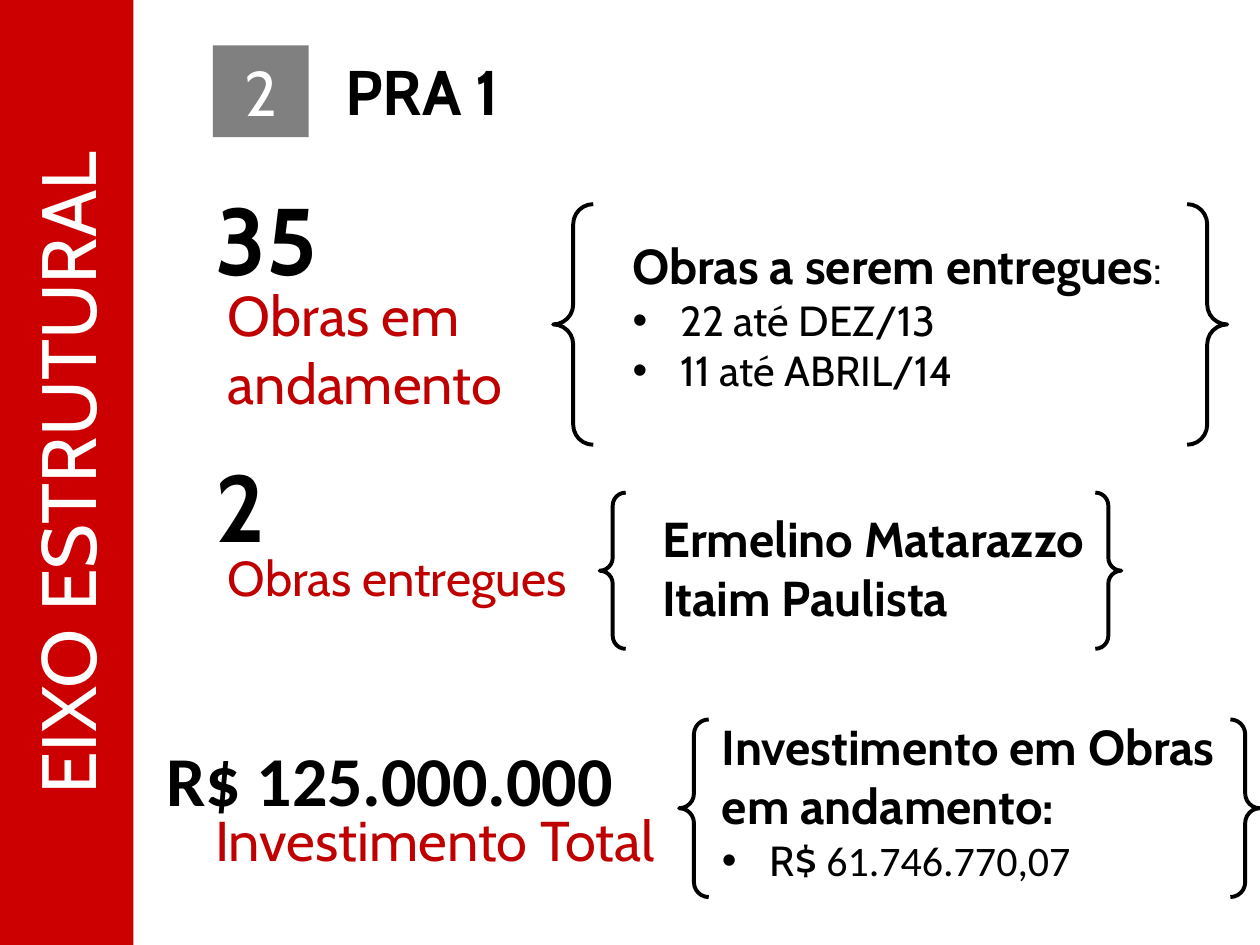
import pptx
import pptx.util
import pptx.dml.color
import pptx.enum.shapes
import pptx.enum.text
import pptx.oxml
import pptx.oxml.ns

Inches = pptx.util.Inches
Pt = pptx.util.Pt
SHAPES = pptx.enum.shapes.MSO_SHAPE
ALIGN = pptx.enum.text.PP_ALIGN
ANCHOR = pptx.enum.text.MSO_ANCHOR
FIT = pptx.enum.text.MSO_AUTO_SIZE

COLORS = {
    "bar": "CC0000",
    "badge": "808080",
    "label": "C00000",
    "text": "000000",
    "light": "FFFFFF",
}
BULLET_INDENT = 0.38


def color(name):
    return pptx.dml.color.RGBColor.from_string(COLORS[name])


def place(shape, left, top, width, height):
    shape.left, shape.top = Inches(left), Inches(top)
    shape.width, shape.height = Inches(width), Inches(height)


def set_bullet(para, bulleted):
    properties = para._p.get_or_add_pPr()
    indent = Inches(BULLET_INDENT) if bulleted else 0
    properties.set("marL", str(indent))
    properties.set("indent", str(-indent))
    namespace = pptx.oxml.ns.nsdecls("a")
    if bulleted:
        marks = [f'<a:buFont {namespace} typeface="Arial"/>',
                 f'<a:buChar {namespace} char="•"/>']
    else:
        marks = [f"<a:buNone {namespace}/>"]
    for mark in marks:
        properties.append(pptx.oxml.parse_xml(mark))


def write_text(shape, paragraphs, size=28, ink="text", bold=False, font="Cabin",
               align=ALIGN.LEFT, anchor=ANCHOR.TOP, fit=FIT.SHAPE_TO_FIT_TEXT):
    """Each paragraph is (bulleted, spans); a span is (text, format changes)."""
    frame = shape.text_frame
    frame.word_wrap = True
    frame.auto_size = fit
    frame.vertical_anchor = anchor
    for index, (bulleted, spans) in enumerate(paragraphs):
        para = frame.add_paragraph() if index else frame.paragraphs[0]
        para.alignment = align
        para.space_before = para.space_after = Pt(0)
        set_bullet(para, bulleted)
        for text, changes in spans:
            span = para.add_run()
            span.text = text
            span.font.size = Pt(changes.get("size", size))
            span.font.bold = changes.get("bold", bold)
            span.font.name = changes.get("font", font)
            span.font.color.rgb = color(ink)


def plain(*lines):
    return [(False, [(line, {})]) for line in lines]


def add_text(page, bounds, *lines, **formats):
    box = page.shapes.add_textbox(*map(Inches, bounds))
    write_text(box, plain(*lines), **formats)


def add_block(page, bounds, fill, text, size, rotation=0):
    block = page.shapes.add_shape(SHAPES.RECTANGLE, *map(Inches, bounds))
    block.shadow.inherit = False
    block.fill.solid()
    block.fill.fore_color.rgb = color(fill)
    block.line.fill.background()
    block.rotation = rotation
    write_text(block, plain(text), size=size, ink="light", align=ALIGN.CENTER,
               anchor=ANCHOR.MIDDLE, fit=FIT.NONE)


def add_braces(page, bounds):
    braces = page.shapes.add_shape(SHAPES.DOUBLE_BRACE, *map(Inches, bounds))
    braces.shadow.inherit = False
    braces.fill.background()
    braces.line.color.rgb = color("text")
    braces.line.width = Pt(2.25)


def fill_placeholder(holder, bounds, paragraphs, **formats):
    place(holder, *bounds)
    write_text(holder, paragraphs, bold=True, **formats)


def main():
    deck = pptx.Presentation()
    deck.slide_width, deck.slide_height = Inches(10), Inches(7.5)
    page = deck.slides.add_slide(deck.slide_layouts.get_by_name("Two Content"))
    title, works, investment = list(page.placeholders)[:3]

    # Heading and side bar
    add_block(page, (1.69, 0.36, 0.76, 0.73), "badge", "2", 36)
    fill_placeholder(title, (2.64, 0.37, 6.93, 0.71), plain("PRA 1"), size=36)
    add_block(page, (-3.26, 3.22, 7.57, 1.07), "bar", "EIXO ESTRUTURAL", 44,
              rotation=270)

    # Works in progress
    add_text(page, (1.71, 2.18, 3.21, 1.18), "Obras em andamento",
             size=32, ink="label")
    add_text(page, (1.61, 1.39, 3.31, 1.01), "35", size=54, bold=True)
    regular = {"size": 24, "bold": False}
    fill_placeholder(works, (4.92, 1.82, 4.44, 1.38), [
        (False, [("Obras a serem entregues", {}), (":", regular)]),
        (True, [("22 até DEZ/13", regular)]),
        (True, [("11 até ABRIL/14", regular)]),
    ])

    # Delivered works
    add_text(page, (1.71, 4.3, 3.29, 0.57), "Obras entregues", ink="label")
    add_text(page, (1.61, 3.51, 3.31, 1.01), "2", size=54, bold=True)
    add_text(page, (5.16, 3.99, 4.44, 1.04), "Ermelino Matarazzo",
             "Itaim Paulista", bold=True)

    # Investment
    add_text(page, (1.22, 5.8, 4.06, 0.77), "R$ 125.000.000", size=40,
             bold=True, font="Calibri")
    add_text(page, (1.61, 6.34, 4.03, 0.64), "Investimento Total",
             size=32, ink="label")
    fill_placeholder(investment, (5.63, 5.64, 4.44, 1.48), [
        (False, [("Investimento em Obras em andamento:", {})]),
        (True, [("R$", regular),
                (" 61.746.770,07", {**regular, "font": "Calibri"})]),
    ])

    # Braces around the details
    for bounds in ((4.39, 1.62, 5.35, 1.91),
                   (4.76, 3.91, 4.14, 1.24),
                   (5.39, 5.71, 4.61, 1.41)):
        add_braces(page, bounds)

    deck.save("out.pptx")


if __name__ == "__main__":
    main()
